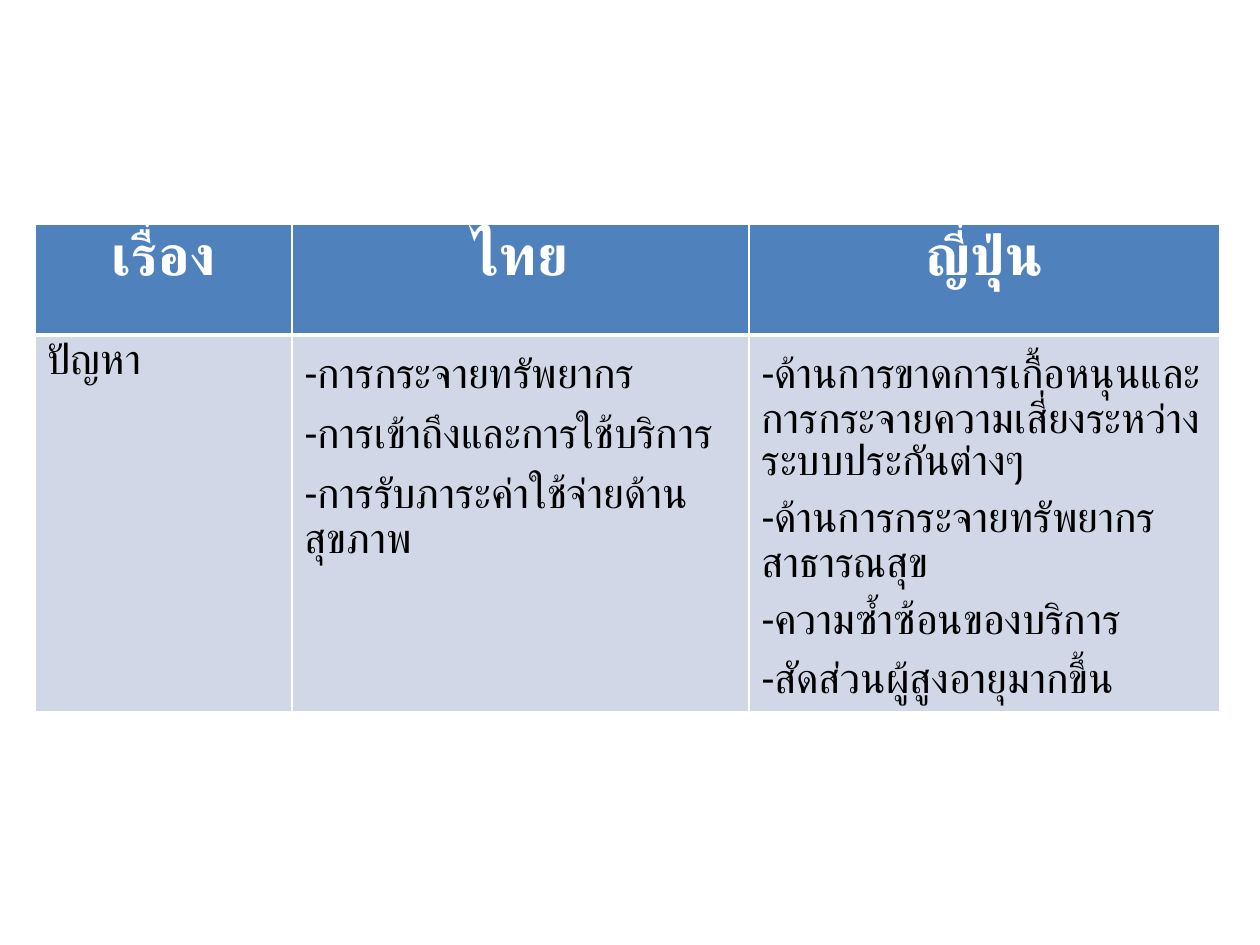
import pptx
import pptx.util
import pptx.dml.color
import pptx.enum.text
import pptx.oxml
import pptx.oxml.ns

# Content
HEADERS = ["เรื่อง", "ไทย", "ญี่ปุ่น"]
PROBLEMS = [
    ["ปัญหา"],
    ["-การกระจายทรัพยากร", "-การเข้าถึงและการใช้บริการ", "-การรับภาระค่าใช้จ่ายด้านสุขภาพ"],
    [
        "-ด้านการขาดการเกื้อหนุนและการกระจายความเสี่ยงระหว่างระบบประกันต่างๆ",
        "-ด้านการกระจายทรัพยากรสาธารณสุข",
        "-ความซ้ำซ้อนของบริการ",
        "-สัดส่วนผู้สูงอายุมากขึ้น",
    ],
]

THEME = {
    "font": "Calibri",
    "header": {"size": 32, "color": "FFFFFF", "fill": "4F81BD", "bold": True},
    "body": {"size": 24, "color": "000000", "fill": "D0D8E8", "bold": False},
    "border": "FFFFFF",
    "gap": 4.8,
}

# Layout in px, 126 to the inch
SCALE = 914400 // 126
SLIDE_SIZE = (1260, 945)
TABLE_LEFT, TABLE_TOP = 35, 224
COLUMN_WIDTHS = [257, 457, 471]
ROW_HEIGHTS = [111, 343]
LIST_TOP_MARGIN = 14


def px(length):
    return pptx.util.Emu(length * SCALE)


def set_borders(cell, bottom_width):
    properties = cell._tc.get_or_add_tcPr()
    widths = {"lnL": 1, "lnR": 1, "lnT": 1, "lnB": bottom_width}
    for index, (tag, width) in enumerate(widths.items()):
        line = pptx.oxml.parse_xml(
            f'<a:{tag} {pptx.oxml.ns.nsdecls("a")} w="{width * 12700}"><a:solidFill>'
            f'<a:srgbClr val="{THEME["border"]}"/></a:solidFill></a:{tag}>'
        )
        properties.insert(index, line)


def fill_cell(cell, lines, style, alignment, bottom_width):
    cell.fill.solid()
    cell.fill.fore_color.rgb = pptx.dml.color.RGBColor.from_string(style["fill"])
    set_borders(cell, bottom_width)
    cell.text_frame.text = "\n".join(lines)
    for index, paragraph in enumerate(cell.text_frame.paragraphs):
        paragraph.alignment = alignment
        if index:
            paragraph.space_before = pptx.util.Pt(THEME["gap"])
        for run in paragraph.runs:
            run.font.name = THEME["font"]
            run.font.size = pptx.util.Pt(style["size"])
            run.font.bold = style["bold"]
            run.font.color.rgb = pptx.dml.color.RGBColor.from_string(style["color"])


def main():
    presentation = pptx.Presentation()
    presentation.slide_width, presentation.slide_height = map(px, SLIDE_SIZE)
    slide = presentation.slides.add_slide(presentation.slide_layouts[6])

    # Comparison table
    table = slide.shapes.add_table(
        2, len(HEADERS), px(TABLE_LEFT), px(TABLE_TOP),
        px(sum(COLUMN_WIDTHS)), px(sum(ROW_HEIGHTS)),
    ).table
    for column, width in zip(table.columns, COLUMN_WIDTHS):
        column.width = px(width)
    for row, height in zip(table.rows, ROW_HEIGHTS):
        row.height = px(height)

    # Header and problem lists
    align = pptx.enum.text.PP_ALIGN
    for index, (header, lines) in enumerate(zip(HEADERS, PROBLEMS)):
        fill_cell(table.cell(0, index), [header], THEME["header"], align.CENTER, 3)
        body_cell = table.cell(1, index)
        fill_cell(body_cell, lines, THEME["body"], align.LEFT, 1)
        if len(lines) > 1:
            body_cell.margin_top = px(LIST_TOP_MARGIN)

    presentation.save("out.pptx")


if __name__ == "__main__":
    main()
